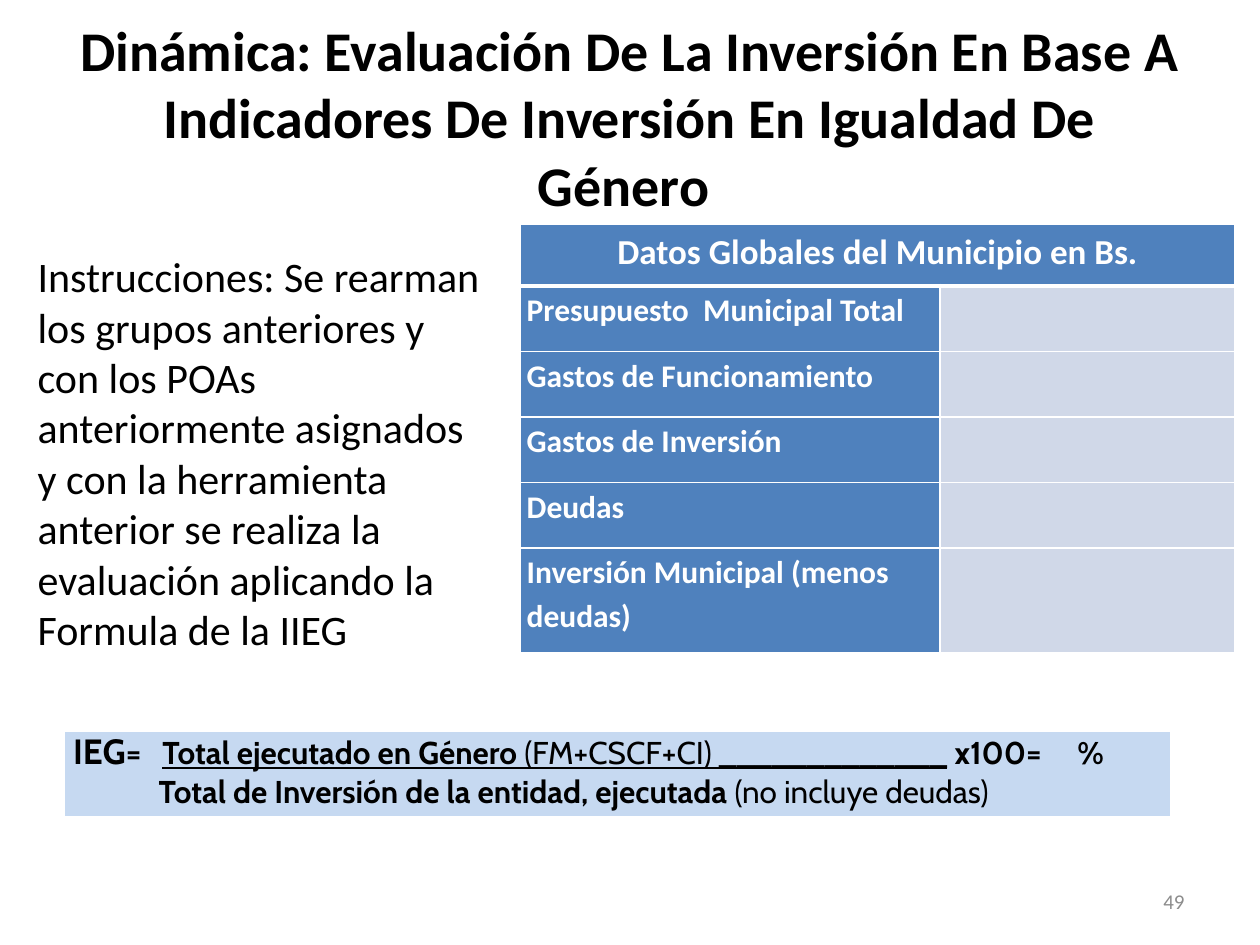
from lxml.etree import SubElement
from pptx import Presentation
from pptx.dml.color import RGBColor
from pptx.enum.text import MSO_ANCHOR, PP_ALIGN
from pptx.oxml.ns import qn
from pptx.util import Inches, Pt

BLACK = RGBColor(0x00, 0x00, 0x00)
WHITE = RGBColor(0xFF, 0xFF, 0xFF)
GRAY = RGBColor(0x8C, 0x8C, 0x8C)
BLUE = RGBColor(0x4F, 0x81, 0xBD)
PALE_BLUE = RGBColor(0xD0, 0xD8, 0xE8)
FORMULA_BLUE = RGBColor(0xC6, 0xD9, 0xF1)

TITLE = ("Dinámica: Evaluación De La Inversión En Base A "
         "Indicadores De Inversión En Igualdad De Género ")
INSTRUCTIONS = ("Instrucciones: Se rearman los grupos anteriores y con los POAs "
                "anteriormente asignados y con la herramienta anterior se realiza "
                "la evaluación aplicando la Formula de la IIEG")
PAGE_NUMBER = "49"
BUDGET_HEADER = "Datos Globales del Municipio en Bs."
BUDGET_ITEMS = [
    "Presupuesto  Municipal Total",
    "Gastos de Funcionamiento",
    "Gastos de Inversión",
    "Deudas",
    "Inversión Municipal (menos deudas)",
]
BUDGET_COLUMNS = [3.33, 2.34]
BUDGET_ROWS = [0.49] + [0.52] * 4 + [0.83]

# Runs: text, size, bold, underline
NUMERATOR = [
    ("IEG", 20, True, False),
    ("=\t", 18, True, False),
    ("Total ejecutado en Género ", 18, True, True),
    ("(FM+CSCF+CI)", 18, False, True),
    (" _____________", 18, True, True),
    (" x100=\t%", 18, True, False),
]
DENOMINATOR = [
    ("Total de Inversión de la entidad, ejecutada ", 18, True, False),
    ("(no incluye deudas)", 18, False, False),
]
NUMERATOR_TABS = [0.71, 7.97]
DENOMINATOR_INDENT = 0.68


def add_run(paragraph, text, size, color, bold=False, underline=False, font="Calibri"):
    run = paragraph.add_run()
    run.text = text
    run.font.name = font
    run.font.size = Pt(size)
    run.font.bold = bold
    run.font.underline = underline
    run.font.color.rgb = color


def add_text(slide, box, text, size, color=BLACK, bold=False,
             align=PP_ALIGN.LEFT, anchor=MSO_ANCHOR.TOP):
    frame = slide.shapes.add_textbox(*map(Inches, box)).text_frame
    frame.word_wrap = True
    frame.vertical_anchor = anchor
    paragraph = frame.paragraphs[0]
    paragraph.alignment = align
    add_run(paragraph, text, size, color, bold)


def add_plain_table(slide, left, top, columns, rows):
    """Add a table with the given column widths and row heights, without banding."""
    table = slide.shapes.add_table(
        len(rows), len(columns), Inches(left), Inches(top),
        Inches(sum(columns)), Inches(sum(rows))).table
    table.first_row = table.horz_banding = False
    for column, width in zip(table.columns, columns):
        column.width = Inches(width)
    for row, height in zip(table.rows, rows):
        row.height = Inches(height)
    return table


def style_cell(cell, fill, side_margin, bottom_width=1, top_width=1):
    cell.margin_left = cell.margin_right = Inches(side_margin)
    cell.margin_top = cell.margin_bottom = 0
    properties = cell._tc.get_or_add_tcPr()
    for side, width in (("L", 1), ("R", 1), ("T", top_width), ("B", bottom_width)):
        line = SubElement(properties, qn(f"a:ln{side}"), w=str(Pt(width)))
        SubElement(SubElement(line, qn("a:solidFill")), qn("a:srgbClr"), val=str(WHITE))
    cell.fill.solid()
    cell.fill.fore_color.rgb = fill


def add_tab_stops(paragraph, positions):
    tabs = SubElement(paragraph._p.get_or_add_pPr(), qn("a:tabLst"))
    for position in positions:
        SubElement(tabs, qn("a:tab"), pos=str(Inches(position)), algn="l")


def write_budget_label(cell, text, size, align=PP_ALIGN.LEFT):
    paragraph = cell.text_frame.paragraphs[0]
    paragraph.alignment = align
    paragraph.line_spacing = 1.15
    paragraph.space_after = Pt(10)
    add_run(paragraph, text, size, WHITE, bold=True)


def add_budget_table(slide):
    table = add_plain_table(slide, 4.13, 1.78, BUDGET_COLUMNS, BUDGET_ROWS)
    header = table.cell(0, 0)
    header.merge(table.cell(0, 1))
    for column in range(2):
        style_cell(table.cell(0, column), BLUE, 0.05, bottom_width=3)
    write_budget_label(header, BUDGET_HEADER, 20, PP_ALIGN.CENTER)
    for row, item in enumerate(BUDGET_ITEMS, start=1):
        for column, fill in enumerate((BLUE, PALE_BLUE)):
            style_cell(table.cell(row, column), fill, 0.05,
                       top_width=3 if row == 1 else 1)
        write_budget_label(table.cell(row, 0), item, 18)


def add_formula(slide):
    cell = add_plain_table(slide, 0.51, 5.8, [8.78], [0.68]).cell(0, 0)
    style_cell(cell, FORMULA_BLUE, 0.07)
    numerator = cell.text_frame.paragraphs[0]
    denominator = cell.text_frame.add_paragraph()
    add_tab_stops(numerator, NUMERATOR_TABS)
    denominator._p.get_or_add_pPr().set("marL", str(Inches(DENOMINATOR_INDENT)))
    for paragraph, runs in ((numerator, NUMERATOR), (denominator, DENOMINATOR)):
        paragraph.alignment = PP_ALIGN.JUSTIFY
        for text, size, bold, underline in runs:
            add_run(paragraph, text, size, BLACK, bold, underline, font="Cabin")


def main():
    presentation = Presentation()
    presentation.slide_width = Inches(10)
    presentation.slide_height = Inches(7.5)
    slide = presentation.slides.add_slide(presentation.slide_layouts[6])
    add_text(slide, (0.5, 0.3, 9, 1.25), TITLE, 32, bold=True,
             align=PP_ALIGN.CENTER, anchor=MSO_ANCHOR.MIDDLE)
    add_text(slide, (0.2, 1.94, 3.78, 3.37), INSTRUCTIONS, 24)
    add_text(slide, (7.17, 6.95, 2.33, 0.4), PAGE_NUMBER, 12, GRAY,
             align=PP_ALIGN.RIGHT, anchor=MSO_ANCHOR.MIDDLE)
    add_formula(slide)
    add_budget_table(slide)
    presentation.save("out.pptx")


if __name__ == "__main__":
    main()
